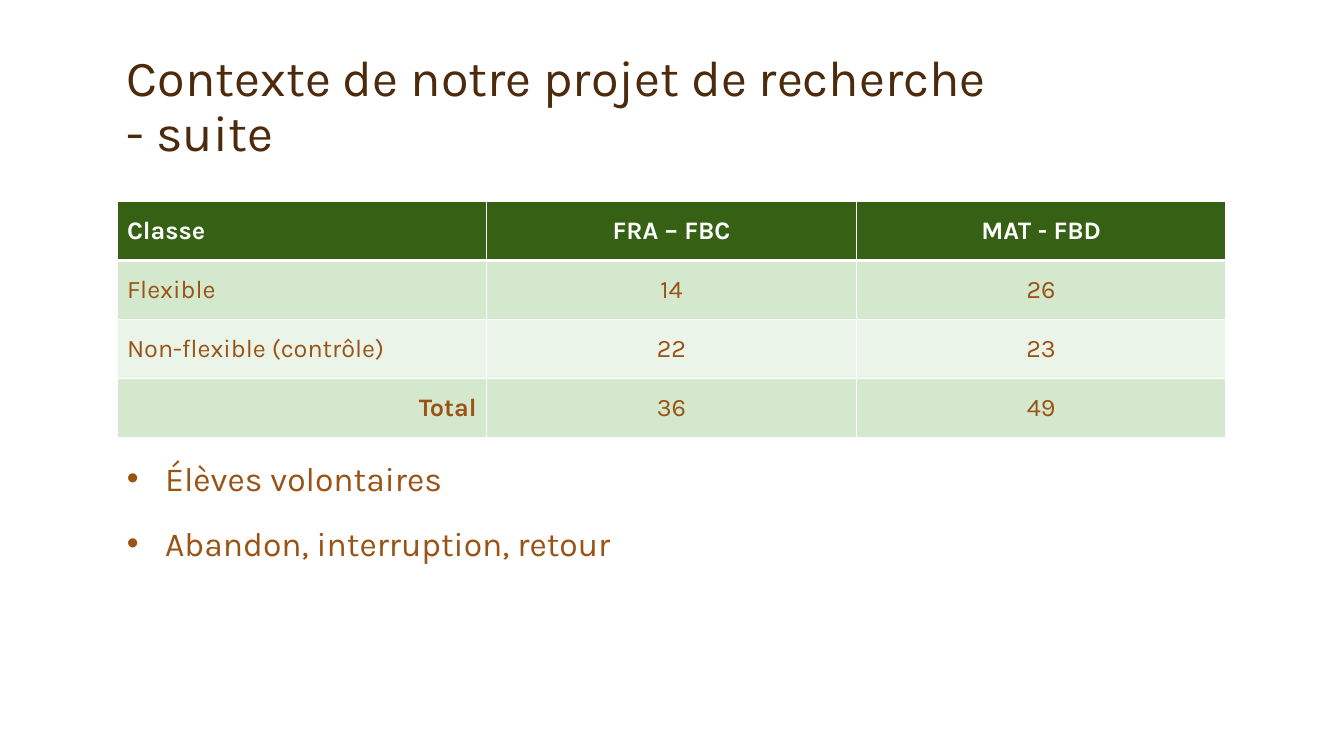
from lxml import etree
from pptx import Presentation
from pptx.dml.color import RGBColor
from pptx.enum.text import MSO_ANCHOR, PP_ALIGN
from pptx.oxml.ns import qn
from pptx.util import Inches, Pt

LEFT, CENTER, RIGHT = PP_ALIGN.LEFT, PP_ALIGN.CENTER, PP_ALIGN.RIGHT
TOP, MIDDLE, BOTTOM = MSO_ANCHOR.TOP, MSO_ANCHOR.MIDDLE, MSO_ANCHOR.BOTTOM

WHITE = RGBColor(0xFF, 0xFF, 0xFF)
DARK_BROWN = RGBColor(0x4D, 0x2A, 0x0B)
BROWN = RGBColor(0x9A, 0x53, 0x15)
DARK_GREEN = RGBColor(0x36, 0x60, 0x13)
GREEN = RGBColor(0xD4, 0xE8, 0xCD)
PALE_GREEN = RGBColor(0xEB, 0xF4, 0xE8)

FONT = "Karla"
TITLE = "Contexte de notre projet de recherche\v- suite"
CLASSES = [
    ("Classe", "FRA – FBC", "MAT - FBD"),
    ("Flexible", "14", "26"),
    ("Non-flexible (contrôle)", "22", "23"),
    ("Total", "36", "49"),
]
REMARKS = ["Élèves volontaires", "Abandon, interruption, retour"]


def set_font(p, size, color, bold=False):
    for name, value in {"name": FONT, "size": Pt(size), "bold": bold}.items():
        for r in p.runs:
            setattr(r.font, name, value)
    for r in p.runs:
        r.font.color.rgb = color


def add_text_frame(s, box, anchor):
    tf = s.shapes.add_textbox(*map(Inches, box)).text_frame
    tf.word_wrap = True
    tf.vertical_anchor = anchor
    return tf


def add_title(s, box):
    p = add_text_frame(s, box, BOTTOM).paragraphs[0]
    p.text = TITLE
    p.line_spacing = 0.9
    set_font(p, 36, DARK_BROWN)


def set_borders(cell, widths):
    tcPr = cell._tc.get_or_add_tcPr()
    for i, (side, width) in enumerate(widths.items()):
        ln = etree.Element(qn("a:" + side), w=str(Pt(width)))
        fill = etree.SubElement(ln, qn("a:solidFill"))
        etree.SubElement(fill, qn("a:srgbClr"), val=str(WHITE))
        tcPr.insert(i, ln)


def add_class_table(s, box):
    rows, cols = len(CLASSES), len(CLASSES[0])
    table = s.shapes.add_table(rows, cols, *map(Inches, box)).table
    for row in table.rows:
        row.height = Inches(box[3] / rows)
    for i, values in enumerate(CLASSES):
        header, total = i == 0, i == rows - 1
        for j, value in enumerate(values):
            cell = table.cell(i, j)
            cell.vertical_anchor = MIDDLE
            cell.fill.solid()
            cell.fill.fore_color.rgb = DARK_GREEN if header else GREEN if i % 2 else PALE_GREEN
            set_borders(cell, {"lnL": 1, "lnR": 1, "lnT": 3 if i == 1 else 1, "lnB": 3 if header else 1})
            p = cell.text_frame.paragraphs[0]
            p.text = value
            p.alignment = CENTER if j else RIGHT if total else LEFT
            set_font(p, 18, WHITE if header else BROWN, header or (total and j == 0))


def add_remarks(s, box):
    tf = add_text_frame(s, box, TOP)
    for i, remark in enumerate(REMARKS):
        p = tf.paragraphs[0] if i == 0 else tf.add_paragraph()
        p.text = remark
        pPr = p._p.get_or_add_pPr()
        pPr.set("marL", str(Inches(0.38)))
        pPr.set("indent", str(Inches(-0.38)))
        etree.SubElement(pPr, qn("a:buFont"), typeface="Arial")
        etree.SubElement(pPr, qn("a:buChar"), char="•")
        if i:
            p.space_before = Pt(18)
        set_font(p, 24, BROWN)


def main():
    prs = Presentation()
    prs.slide_width, prs.slide_height = Inches(13.33), Inches(7.5)
    s = prs.slides.add_slide(prs.slide_layouts[6])
    add_title(s, (1.16, 0.33, 11, 1.33))
    add_class_table(s, (1.16, 2, 11, 2.34))
    add_remarks(s, (1.16, 4.49, 5.42, 2.42))
    prs.save("out.pptx")


if __name__ == "__main__":
    main()
